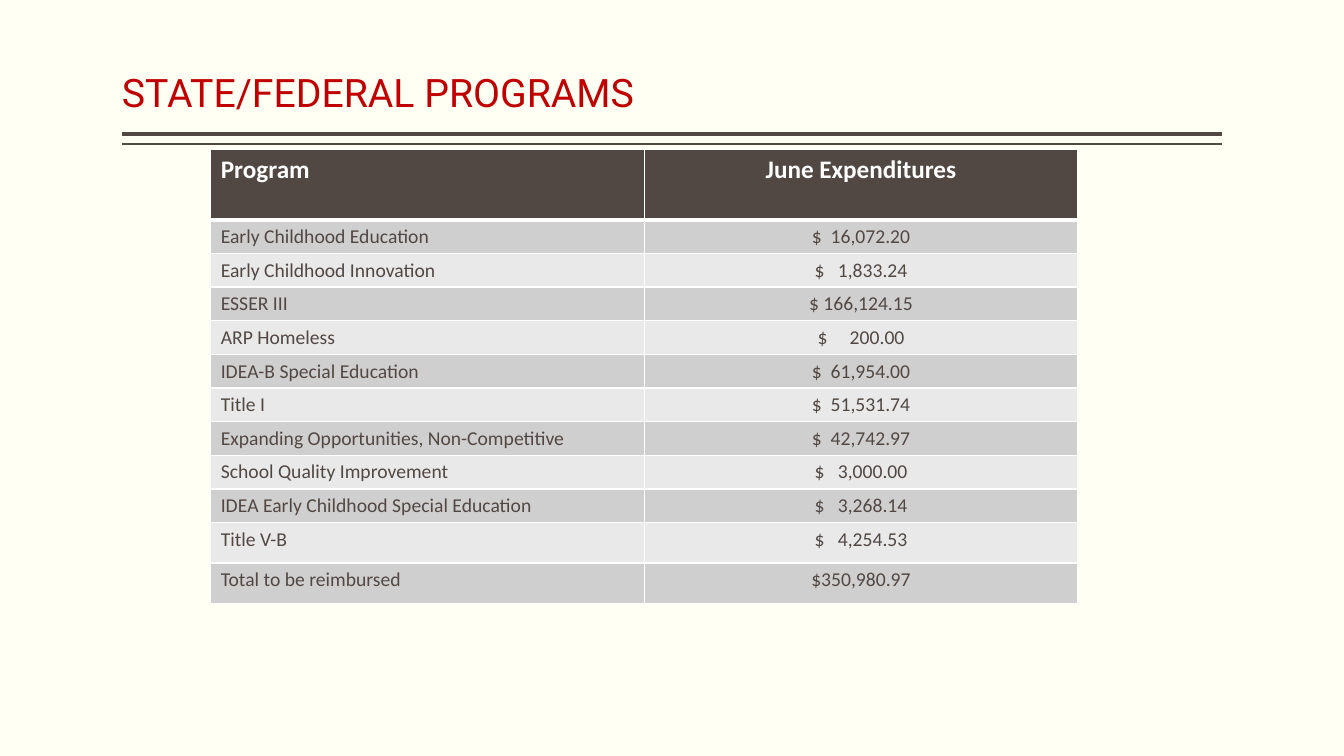
from dataclasses import dataclass

from lxml.etree import SubElement
from pptx import Presentation
from pptx.dml.color import RGBColor
from pptx.enum.shapes import MSO_CONNECTOR
from pptx.enum.text import MSO_ANCHOR, PP_ALIGN
from pptx.oxml.ns import qn
from pptx.util import Inches, Pt

# Content
TITLE = "STATE/FEDERAL PROGRAMS"
HEADER = ("Program", "June Expenditures")
EXPENDITURES = [
    ("Early Childhood Education", "16,072.20"),
    ("Early Childhood Innovation", "1,833.24"),
    ("ESSER III", "166,124.15"),
    ("ARP Homeless", "200.00"),
    ("IDEA-B Special Education", "61,954.00"),
    ("Title I", "51,531.74"),
    ("Expanding Opportunities, Non-Competitive", "42,742.97"),
    ("School Quality Improvement", "3,000.00"),
    ("IDEA Early Childhood Special Education", "3,268.14"),
    ("Title V-B", "4,254.53"),
]
TOTAL = ("Total to be reimbursed", "350,980.97")


@dataclass(frozen=True)
class Theme:
    background: str = "FFFFF3"
    accent: str = "C00000"
    dark: str = "514843"
    white: str = "FFFFFF"
    bands: tuple = ("D0CFCF", "E9E9E9")
    title_font: str = "Roboto"
    table_font: str = "Calibri"
    title_size: int = 28
    header_size: int = 18
    body_size: int = 14


THEME = Theme()

# Layout in inches
SLIDE_W, SLIDE_H = 13.33, 7.5
MARGIN = 1.21
CONTENT_W = SLIDE_W - 2 * MARGIN
TITLE_H = 1.2
RULES = [(1.33, 3), (1.43, 1)]  # height on slide, weight in points
TABLE_X, TABLE_Y = 2.09, 1.48
COLUMN_W = 4.3
HEADER_H, ROW_H, LAST_ROW_H = 0.7, 0.33, 0.4
AMOUNT_CHARS = 11  # characters that amount and padding fill after the $
SPACE_W = 0.226 * THEME.body_size  # width of a space in points


def rgb(value):
    return RGBColor.from_string(value)


def style(p, font, size, color, bold=False):
    p.font.name, p.font.size, p.font.bold = font, Pt(size), bold
    p.font.color.rgb = rgb(color)


def set_borders(cell, top=1, bottom=1):
    tc_pr = cell._tc.get_or_add_tcPr()
    sides = {"lnL": 1, "lnR": 1, "lnT": top, "lnB": bottom}
    for i, (tag, weight) in enumerate(sides.items()):
        ln = SubElement(tc_pr, qn(f"a:{tag}"), w=str(Pt(weight)))
        fill = SubElement(ln, qn("a:solidFill"))
        SubElement(fill, qn("a:srgbClr"), val=THEME.white)
        tc_pr.insert(i, ln)


def add_amount(p, amount, is_total):
    """Write the amount, widening the gap after $ for shorter numbers."""
    dollar = p.add_run()
    dollar.text = "$"
    if not is_total:
        extra = AMOUNT_CHARS - len(amount) - 1
        dollar._r.get_or_add_rPr().set("spc", str(round(extra * SPACE_W * 100)))
    p.add_run().text = amount if is_total else f" {amount}"


def add_title(s):
    tf = s.shapes.add_textbox(Inches(MARGIN), 0, Inches(CONTENT_W), Inches(TITLE_H)).text_frame
    tf.word_wrap = True
    tf.vertical_anchor = MSO_ANCHOR.BOTTOM
    tf.margin_left = tf.margin_right = 0
    p = tf.paragraphs[0]
    p.text, p.line_spacing = TITLE, 0.9
    style(p, THEME.title_font, THEME.title_size, THEME.accent)


def add_rules(s):
    for y, weight in RULES:
        line = s.shapes.add_connector(MSO_CONNECTOR.STRAIGHT, Inches(MARGIN + CONTENT_W),
                                      Inches(y), Inches(MARGIN), Inches(y))
        line.line.color.rgb, line.line.width = rgb(THEME.dark), Pt(weight)
        SubElement(line._element.spPr, qn("a:effectLst"))


def add_expenditure_table(s):
    rows = [HEADER, *EXPENDITURES, TOTAL]
    last = len(rows) - 1
    heights = [HEADER_H] + [ROW_H] * (last - 2) + [LAST_ROW_H] * 2
    table = s.shapes.add_table(len(rows), len(HEADER), Inches(TABLE_X), Inches(TABLE_Y),
                               Inches(COLUMN_W * len(HEADER)), Inches(sum(heights))).table
    for column in table.columns:
        column.width = Inches(COLUMN_W)
    for i, (values, height) in enumerate(zip(rows, heights)):
        table.rows[i].height = Inches(height)
        for j, value in enumerate(values):
            cell = table.cell(i, j)
            p = cell.text_frame.paragraphs[0]
            if i and j:
                add_amount(p, value, i == last)
            else:
                p.text = value
            p.alignment = PP_ALIGN.CENTER if j else PP_ALIGN.LEFT
            cell.fill.solid()
            if i == 0:
                cell.fill.fore_color.rgb = rgb(THEME.dark)
                style(p, THEME.table_font, THEME.header_size, THEME.white, bold=True)
            else:
                cell.fill.fore_color.rgb = rgb(THEME.bands[(i - 1) % 2])
                style(p, THEME.table_font, THEME.body_size, THEME.dark)
            set_borders(cell, top=3 if i == 1 else 1, bottom=3 if i == 0 else 1)


def main():
    prs = Presentation()
    prs.slide_width, prs.slide_height = Inches(SLIDE_W), Inches(SLIDE_H)
    s = prs.slides.add_slide(prs.slide_layouts[6])
    s.background.fill.solid()
    s.background.fill.fore_color.rgb = rgb(THEME.background)
    add_rules(s)
    add_title(s)
    add_expenditure_table(s)
    prs.save("out.pptx")


if __name__ == "__main__":
    main()
